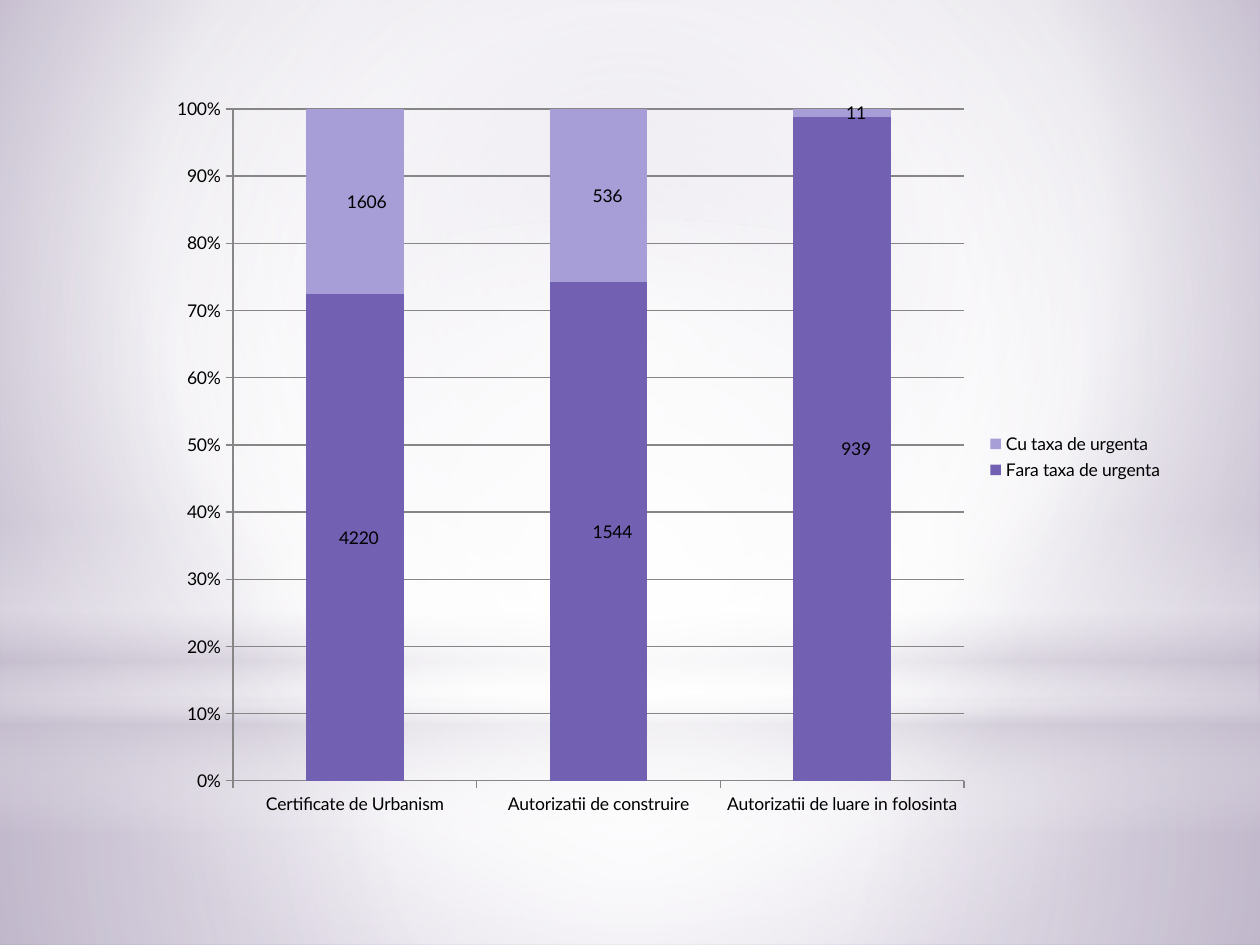
from dataclasses import dataclass

from lxml import etree
from pptx import Presentation
from pptx.chart.data import CategoryChartData
from pptx.dml.color import RGBColor
from pptx.enum.chart import XL_CHART_TYPE, XL_LABEL_POSITION, XL_LEGEND_POSITION, XL_TICK_MARK
from pptx.enum.shapes import MSO_SHAPE
from pptx.oxml import parse_xml
from pptx.oxml.ns import nsdecls, qn
from pptx.util import Pt

STACKED = XL_CHART_TYPE.COLUMN_STACKED_100
CENTER = XL_LABEL_POSITION.CENTER
RIGHT = XL_LEGEND_POSITION.RIGHT
OUTSIDE = XL_TICK_MARK.OUTSIDE
RECTANGLE = MSO_SHAPE.RECTANGLE
OVAL = MSO_SHAPE.OVAL

EMU_PER_PX = 914400 / 126
SLIDE_BOX = (0, 0, 1260, 945)
CHART_BOX = (158, 84, 1018, 746)
PLOT_BOX = (233, 109, 731, 672)
CENTERED = (50, 50, 50, 50)
FONT = "Lato"
BLACK = "000000"
GREY = "868686"


@dataclass(frozen=True)
class Gradient:
    """Stops of position, colour and opacity; circular when a focus is given."""
    stops: tuple[tuple[int, str, int], ...]
    focus: tuple[int, int, int, int] | None = None


@dataclass(frozen=True)
class Layer:
    """A full-width light effect behind the chart."""
    preset: MSO_SHAPE
    top: int
    height: int
    gradient: Gradient


@dataclass(frozen=True)
class Fee:
    """A chart series with the sideways shift of each label in px."""
    name: str
    values: tuple[int, ...]
    color: str
    label_shifts: tuple[int, ...]


BACKDROP = Gradient(((0, "C1B7CD", 100), (60, "FFFFFF", 100), (100, "A191B5", 100)),
                    (20, 10, 20, 60))
LAYERS = (
    Layer(RECTANGLE, 703, 242, Gradient(
        ((0, "FFFFFF", 91), (37, "FFFFFF", 76), (100, "C9C2D1", 79)), CENTERED)),
    Layer(RECTANGLE, 0, 703, Gradient(
        ((0, "FFFFFF", 89), (48, "FFFFFF", 62), (100, "C9C2D1", 79)), CENTERED)),
    Layer(RECTANGLE, 519, 315, Gradient(
        ((0, "FFFFFF", 0), (29, "FFFFFF", 30), (45, "C9C2D1", 40),
         (55, "FFFFFF", 26), (65, "C9C2D1", 60), (100, "FFFFFF", 0)))),
    Layer(OVAL, 220, 703, Gradient(((0, "FFFFFF", 100), (56, "FFFFFF", 0)), CENTERED)),
)
CATEGORIES = ("Certificate de Urbanism", "Autorizatii de construire",
              "Autorizatii de luare in folosinta")
FEES = (
    Fee("Fara taxa de urgenta", (4220, 1544, 939), "7260B3", (4, 14, 14)),
    Fee("Cu taxa de urgenta", (1606, 536, 11), "A79DD7", (12, 9, 14)),
)


def px(length: int) -> int:
    """Turn px into EMU."""
    return round(length * EMU_PER_PX)


def rgb(color: str) -> RGBColor:
    """Turn a hex string into a colour."""
    return RGBColor.from_string(color)


def paint_gradient(element, gradient: Gradient) -> None:
    """Replace the solid fill inside an element by a gradient."""
    stops = "".join(
        f'<a:gs pos="{position * 1000}"><a:srgbClr val="{color}">'
        f'<a:alpha val="{opacity * 1000}"/></a:srgbClr></a:gs>'
        for position, color, opacity in gradient.stops)
    if gradient.focus:
        sides = " ".join(f'{side}="{share * 1000}"'
                         for side, share in zip("ltrb", gradient.focus))
        direction = f'<a:path path="circle"><a:fillToRect {sides}/></a:path>'
    else:
        direction = '<a:lin ang="5400000" scaled="0"/>'
    fill = parse_xml(f'<a:gradFill {nsdecls("a")} rotWithShape="1">'
                     f'<a:gsLst>{stops}</a:gsLst>{direction}</a:gradFill>')
    solid = next(element.iter(qn("a:solidFill")))
    solid.getparent().replace(solid, fill)


def add_layer(slide, layer: Layer) -> None:
    """Draw one light effect across the slide."""
    box = (0, layer.top, SLIDE_BOX[2], layer.height)
    shape = slide.shapes.add_shape(layer.preset, *map(px, box))
    shape.shadow.inherit = False
    shape.line.fill.background()
    shape.fill.solid()
    paint_gradient(shape.element, layer.gradient)


def make_layout(**settings: str | float):
    """Build a manual chart layout from its settings."""
    layout = etree.Element(qn("c:layout"))
    manual = etree.SubElement(layout, qn("c:manualLayout"))
    for name, value in settings.items():
        etree.SubElement(manual, qn(f"c:{name}"), val=str(value))
    return layout


def place_plot(chart) -> None:
    """Fix the inner plot area within the chart frame."""
    left, top, width, height = CHART_BOX
    plot_left, plot_top, plot_width, plot_height = PLOT_BOX
    layout = make_layout(
        layoutTarget="inner", xMode="edge", yMode="edge",
        x=(plot_left - left) / width, y=(plot_top - top) / height,
        w=plot_width / width, h=plot_height / height)
    area = next(chart.element.iter(qn("c:plotArea")))
    for old in area.findall(qn("c:layout")):
        area.remove(old)
    area.insert(0, layout)


def style_series(chart) -> None:
    """Colour the series and place their value labels."""
    for series, fee in zip(chart.plots[0].series, FEES):
        series.format.fill.solid()
        series.format.fill.fore_color.rgb = rgb(fee.color)
        series.data_labels.show_value = True
        for index in range(len(fee.values)):
            series.points[index].data_label.position = CENTER
    shifts = [shift for fee in FEES for shift in fee.label_shifts]
    for label, shift in zip(chart.element.iter(qn("c:dLbl")), shifts):
        label.insert(1, make_layout(x=shift / CHART_BOX[2], y=0))


def style_axes(chart) -> None:
    """Format both axes and the gridlines."""
    for axis in (chart.category_axis, chart.value_axis):
        axis.major_tick_mark = OUTSIDE
        axis.format.line.color.rgb = rgb(GREY)
        axis.format.line.width = Pt(0.75)
    values = chart.value_axis
    values.minimum_scale, values.maximum_scale, values.major_unit = 0, 1, 0.1
    values.tick_labels.number_format = "0%"
    values.tick_labels.number_format_is_linked = False
    values.has_major_gridlines = True
    values.major_gridlines.format.line.color.rgb = rgb(GREY)
    values.major_gridlines.format.line.width = Pt(0.75)


def add_fee_chart(slide) -> None:
    """Add the stacked chart of permits by fee."""
    data = CategoryChartData(number_format="General")
    data.categories = CATEGORIES
    for fee in FEES:
        data.add_series(fee.name, fee.values)
    chart = slide.shapes.add_chart(STACKED, *map(px, CHART_BOX), data).chart
    chart.has_title = False
    chart.font.name, chart.font.size = FONT, Pt(10)
    chart.font.color.rgb = rgb(BLACK)
    chart.has_legend = True
    chart.legend.position = RIGHT
    chart.legend.include_in_layout = False
    plot = chart.plots[0]
    plot.gap_width, plot.overlap, plot.vary_by_categories = 150, 100, False
    style_axes(chart)
    style_series(chart)
    place_plot(chart)


def main() -> None:
    """Build the slide and save it."""
    deck = Presentation()
    deck.slide_width, deck.slide_height = map(px, SLIDE_BOX[2:])
    slide = deck.slides.add_slide(deck.slide_layouts[6])
    slide.background.fill.solid()
    paint_gradient(slide.element, BACKDROP)
    for layer in LAYERS:
        add_layer(slide, layer)
    add_fee_chart(slide)
    deck.save("out.pptx")


if __name__ == "__main__":
    main()
